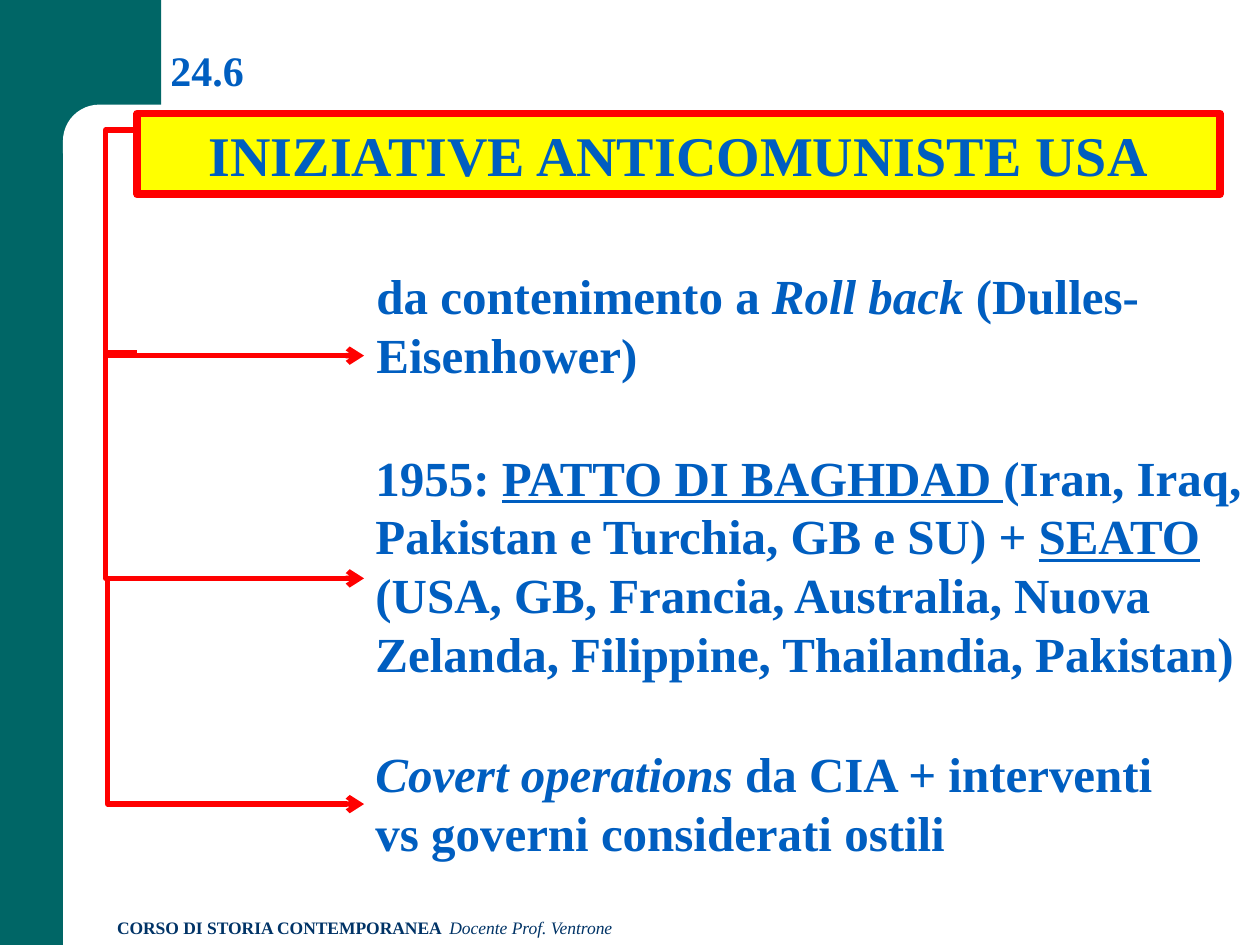
import pptx
import pptx.dml.color
import pptx.enum.shapes
import pptx.enum.text
import pptx.oxml
import pptx.oxml.ns
import pptx.util

Cm = pptx.util.Cm
Shapes = pptx.enum.shapes.MSO_SHAPE
Anchor = pptx.enum.text.MSO_ANCHOR
Align = pptx.enum.text.PP_ALIGN

COLORS = {"green": "006666", "white": "FFFFFF", "yellow": "FFFF00",
          "red": "FF0000", "blue": "005EC0", "navy": "003366"}
FONT = "Times New Roman"
ITALIC = {"italic": True}
UNDERLINE = {"underline": True}


def color(name):
    return pptx.dml.color.RGBColor.from_string(COLORS[name])


def element(tag, **attributes):
    node = pptx.oxml.parse_xml(f"<a:{tag} {pptx.oxml.ns.nsdecls('a')}/>")
    for name, value in attributes.items():
        node.set(name, str(value))
    return node


def write_text(shape, spans, size, ink="blue", align=Align.LEFT, anchor=Anchor.TOP):
    """Fill a shape with one paragraph of (text, format values) spans."""
    frame = shape.text_frame
    settings = {"word_wrap": True, "vertical_anchor": anchor,
                "auto_size": pptx.enum.text.MSO_AUTO_SIZE.NONE}
    for name, value in settings.items():
        setattr(frame, name, value)
    para = frame.paragraphs[0]
    para.alignment = align
    for text, changes in spans:
        span = para.add_run()
        span.text = text
        values = {"name": FONT, "size": pptx.util.Pt(size), "bold": True} | changes
        for name, value in values.items():
            setattr(span.font, name, value)
        span.font.color.rgb = color(ink)
    return para


def add_block(page, kind, place, fill):
    block = page.shapes.add_shape(kind, *map(Cm, place))
    block.shadow.inherit = False
    block.fill.solid()
    block.fill.fore_color.rgb = color(fill)
    block.line.fill.background()
    return block


def add_text(page, place, spans, size=28, ink="blue"):
    box = page.shapes.add_textbox(*map(Cm, place))
    return write_text(box, spans, size, ink)


def add_branch(page, top, bend):
    """Elbow arrow that leaves to the left by bend and ends at the texts."""
    left, right, drop = 2.77, 7.34, 4.55
    arrow = page.shapes.add_connector(
        pptx.enum.shapes.MSO_CONNECTOR.ELBOW,
        Cm(left), Cm(top), Cm(right), Cm(top + drop))
    arrow.line.color.rgb = color("red")
    arrow.line.width = pptx.util.Pt(3)
    arrow.line._get_or_add_ln().append(element("tailEnd", type="arrow"))
    properties = arrow._element.spPr
    properties.append(element("effectLst"))
    guides = properties.find(pptx.oxml.ns.qn("a:prstGeom")).get_or_add_avLst()
    share = round(-bend / (right - left) * 100000)
    guides.append(element("gd", name="adj1", fmla=f"val {share}"))


def add_frame(page):
    add_block(page, Shapes.RECTANGLE, (0, 0, 1.27, 19.05), "green")
    add_block(page, Shapes.RECTANGLE, (0, 0, 3.25, 2.97), "green")
    corner = add_block(page, Shapes.ROUNDED_RECTANGLE, (1.27, 2.11, 15.04, 1.7), "white")
    corner.adjustments[0] = 0.43


def add_footer(page):
    para = add_text(page, (2.11, 18.36, 15.67, 0.69),
                    [("CORSO DI STORIA CONTEMPORANEA\t", {}),
                     ("Docente Prof. Ventrone", {"bold": False, "italic": True})],
                    size=10, ink="navy")
    stops = element("tabLst")
    stops.append(element("tab", pos=Cm(6.7), algn="l"))
    para._p.get_or_add_pPr().append(stops)


def add_number(page):
    title = page.shapes.title
    place = {"left": 3.18, "top": 0.79, "width": 2.44, "height": 1.27}
    for name, value in place.items():
        setattr(title, name, Cm(value))
    para = write_text(title, [("24.6", {})], 24, anchor=Anchor.BOTTOM)
    para.line_spacing = 0.9


def add_heading(page):
    banner = add_block(page, Shapes.RECTANGLE, (2.77, 2.29, 21.82, 1.63), "yellow")
    banner.line.color.rgb = color("red")
    banner.line.width = pptx.util.Pt(4.5)
    write_text(banner, [("INIZIATIVE ANTICOMUNISTE USA", {})], 32,
               align=Align.CENTER, anchor=Anchor.MIDDLE)


def main():
    deck = pptx.Presentation()
    deck.slide_width, deck.slide_height = Cm(25.4), Cm(19.05)
    page = deck.slides.add_slide(deck.slide_layouts.get_by_name("Title Only"))

    # Green frame and course line
    add_frame(page)
    add_footer(page)

    # Section number and heading
    add_number(page)
    add_heading(page)

    # Branches from the heading to the initiatives
    for top, bend in ((2.62, 0.64), (7.11, 0.64), (11.66, 0.6)):
        add_branch(page, top, bend)

    # Initiatives
    add_text(page, (7.34, 5.23, 17.48, 2.64),
             [("da contenimento a ", {}), ("Roll back ", ITALIC),
              ("(Dulles-Eisenhower)", {})])
    add_text(page, (7.32, 8.89, 18.06, 5.05),
             [("1955: ", {}), ("PATTO DI BAGHDAD ", UNDERLINE),
              ("(Iran, Iraq, Pakistan e Turchia, GB e SU) + ", {}),
              ("SEATO", UNDERLINE),
              (" (USA, GB, Francia, Australia, Nuova Zelanda, Filippine, "
               "Thailandia, Pakistan)", {})])
    add_text(page, (7.32, 14.86, 17.27, 2.64),
             [("Covert operations ", ITALIC),
              ("da CIA + interventi vs governi considerati ostili", {})])

    deck.save("out.pptx")


if __name__ == "__main__":
    main()
